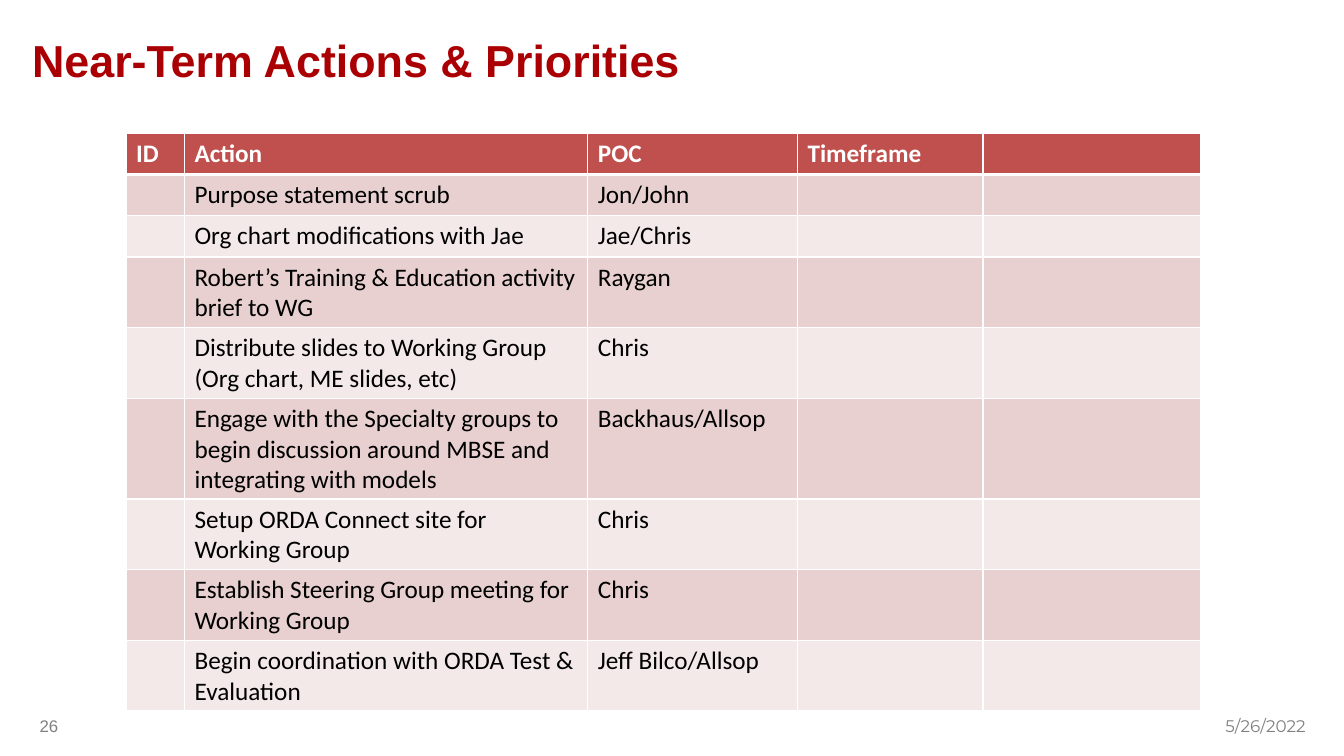
from lxml.etree import SubElement
from pptx import Presentation
from pptx.dml.color import RGBColor
from pptx.enum.text import MSO_ANCHOR, PP_ALIGN
from pptx.oxml.ns import qn
from pptx.util import Inches, Pt

TITLE_RED = RGBColor(0xAB, 0x00, 0x03)
HEADER_RED = RGBColor(0xC0, 0x50, 0x4D)
BAND_DARK = RGBColor(0xE8, 0xD0, 0xD0)
BAND_LIGHT = RGBColor(0xF4, 0xE9, 0xE9)
FOOTER_GRAY = RGBColor(0x80, 0x80, 0x80)
WHITE = RGBColor(0xFF, 0xFF, 0xFF)
BLACK = RGBColor(0x00, 0x00, 0x00)

COLUMN_WIDTHS = [0.58, 4, 2.08, 1.84, 2.16]
ROW_HEIGHT = 0.41
HEADINGS = ["ID", "Action", "POC", "Timeframe", ""]
ACTIONS = [
    ("Purpose statement scrub", "Jon/John"),
    ("Org chart modifications with Jae", "Jae/Chris"),
    ("Robert’s Training & Education activity brief to WG", "Raygan"),
    ("Distribute slides to Working Group (Org chart, ME slides, etc)", "Chris"),
    ("Engage with the Specialty groups to begin discussion around MBSE "
     "and integrating with models", "Backhaus/Allsop"),
    ("Setup ORDA Connect site for Working Group", "Chris"),
    ("Establish Steering Group meeting for Working Group", "Chris"),
    ("Begin coordination with ORDA Test & Evaluation", "Jeff Bilco/Allsop"),
]


def write(paragraph, text, color, **font_format):
    paragraph.text = text
    paragraph.font.color.rgb = color
    for attribute, value in font_format.items():
        setattr(paragraph.font, attribute, value)


def add_label(slide, box, text, color, align=PP_ALIGN.LEFT, **font_format):
    frame = slide.shapes.add_textbox(*map(Inches, box)).text_frame
    frame.word_wrap = True
    frame.vertical_anchor = MSO_ANCHOR.MIDDLE
    frame.paragraphs[0].alignment = align
    write(frame.paragraphs[0], text, color, **font_format)


def set_borders(cell, widths):
    properties = cell._tc.get_or_add_tcPr()
    for side, width in widths.items():
        line = SubElement(properties, qn(f"a:ln{side}"), w=str(Pt(width)))
        fill = SubElement(line, qn("a:solidFill"))
        SubElement(fill, qn("a:srgbClr"), val=str(WHITE))


def add_action_table(slide):
    rows = [HEADINGS] + [["", action, poc, "", ""] for action, poc in ACTIONS]
    table = slide.shapes.add_table(
        len(rows), len(HEADINGS), Inches(1.25), Inches(1.32),
        Inches(sum(COLUMN_WIDTHS)), Inches(ROW_HEIGHT * len(rows))).table
    for column, width in zip(table.columns, COLUMN_WIDTHS):
        column.width = Inches(width)

    for row_index, texts in enumerate(rows):
        table.rows[row_index].height = Inches(ROW_HEIGHT)
        is_header = row_index == 0
        band = BAND_DARK if row_index % 2 else BAND_LIGHT
        # The rule under the header is heavier than the other grid lines
        widths = {"L": 1, "R": 1, "T": 3 if row_index == 1 else 1,
                  "B": 3 if is_header else 1}
        for column_index, text in enumerate(texts):
            cell = table.cell(row_index, column_index)
            set_borders(cell, widths)
            cell.fill.solid()
            cell.fill.fore_color.rgb = HEADER_RED if is_header else band
            write(cell.text_frame.paragraphs[0], text,
                  WHITE if is_header else BLACK,
                  name="Calibri", size=Pt(18), bold=is_header)


def main():
    presentation = Presentation()
    presentation.slide_width = Inches(13.33)
    presentation.slide_height = Inches(7.5)
    slide = presentation.slides.add_slide(presentation.slide_layouts[6])

    # Title
    add_label(slide, (0.22, 0.19, 11, 0.81), "Near-Term Actions & Priorities",
              TITLE_RED, name="Arial", size=Pt(32), bold=True)

    # Footer: date and slide number
    add_label(slide, (9.56, 7, 3.49, 0.4), "5/26/2022", FOOTER_GRAY,
              PP_ALIGN.RIGHT, name="Montserrat", size=Pt(12))
    add_label(slide, (0.22, 7, 0.53, 0.4), "26", FOOTER_GRAY,
              PP_ALIGN.CENTER, name="Arial", size=Pt(12))

    # Actions
    add_action_table(slide)

    presentation.save("out.pptx")


if __name__ == "__main__":
    main()
